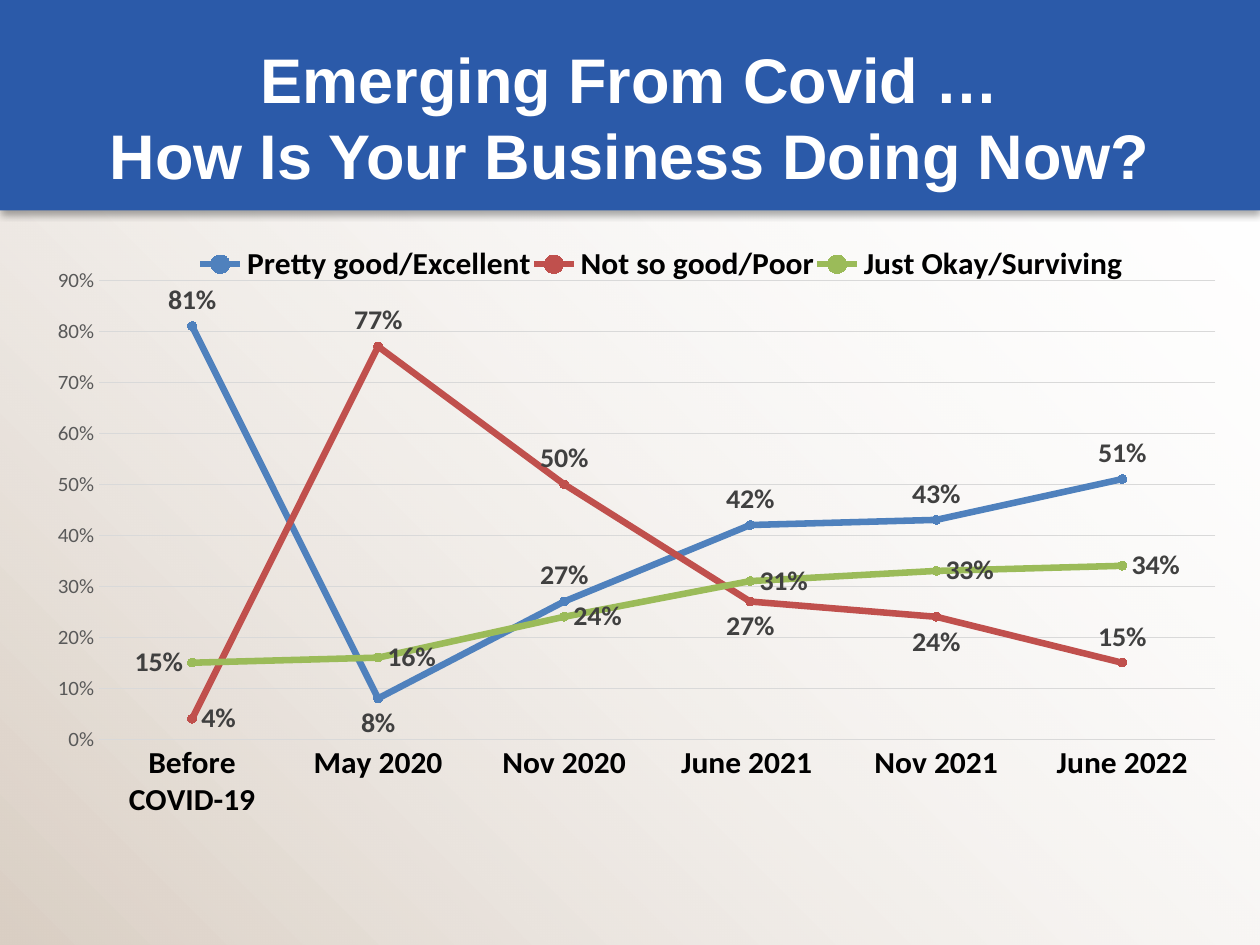
from lxml import etree
from pptx import Presentation
from pptx.chart.data import CategoryChartData
from pptx.dml.color import RGBColor
from pptx.enum.chart import (XL_CHART_TYPE as ChartType, XL_LABEL_POSITION as LabelPos,
                             XL_LEGEND_POSITION as LegendPos, XL_MARKER_STYLE as Marker,
                             XL_TICK_MARK as TickMark)
from pptx.enum.shapes import MSO_SHAPE as Shape
from pptx.enum.text import MSO_ANCHOR as Anchor, PP_ALIGN as Align
from pptx.oxml import parse_xml
from pptx.oxml.ns import nsdecls, qn
from pptx.util import Inches, Pt

WHITE = RGBColor(0xFF, 0xFF, 0xFF)
BLACK = RGBColor(0, 0, 0)
SAND = RGBColor(0xDA, 0xCF, 0xC4)
BANNER_BLUE = RGBColor(0x2B, 0x5A, 0xA9)
GRID_GRAY = RGBColor(0xD9, 0xD9, 0xD9)
AXIS_GRAY = RGBColor(0x59, 0x59, 0x59)
LABEL_GRAY = RGBColor(0x40, 0x40, 0x40)
BLUE = RGBColor(0x4F, 0x81, 0xBD)
RED = RGBColor(0xC0, 0x50, 0x4D)
GREEN = RGBColor(0x9B, 0xBB, 0x59)

# Content
TITLE = "Emerging From Covid …\vHow Is Your Business Doing Now?"
PERIODS = ["Before COVID-19", "May 2020", "Nov 2020", "June 2021 ", "Nov 2021", "June 2022"]
# name, values, colour, usual label position, label positions of single points
RATINGS = [
    ("Pretty good/Excellent", [0.81, 0.08, 0.27, 0.42, 0.43, 0.51], BLUE,
     LabelPos.ABOVE, {1: LabelPos.BELOW}),
    ("Not so good/Poor", [0.04, 0.77, 0.50, 0.27, 0.24, 0.15], RED,
     LabelPos.ABOVE, {0: LabelPos.RIGHT, 3: LabelPos.BELOW, 4: LabelPos.BELOW}),
    ("Just Okay/Surviving", [0.15, 0.16, 0.24, 0.31, 0.33, 0.34], GREEN,
     LabelPos.RIGHT, {0: LabelPos.LEFT}),
]


def set_font(font, size, color, bold=False, name="Calibri"):
    font.name, font.size, font.bold = name, Pt(size), bold
    font.color.rgb = color


def add_panel(page, height):
    panel = page.shapes.add_shape(Shape.RECTANGLE, 0, 0, Inches(10), Inches(height))
    panel.shadow.inherit = False
    panel.line.fill.background()
    return panel


def set_layout(part, index, left, top, width, height, inner=False):
    """Place a chart part by fractions of the chart's size."""
    for layout in part.findall(qn("c:layout")):
        part.remove(layout)
    target = '<c:layoutTarget val="inner"/>' if inner else ""
    part.insert(index, parse_xml(
        f'<c:layout {nsdecls("c")}><c:manualLayout>{target}'
        '<c:xMode val="edge"/><c:yMode val="edge"/>'
        f'<c:x val="{left}"/><c:y val="{top}"/><c:w val="{width}"/><c:h val="{height}"/>'
        '</c:manualLayout></c:layout>'))


deck = Presentation()
deck.slide_width, deck.slide_height = Inches(10), Inches(7.5)
page = deck.slides.add_slide(deck.slide_layouts[6])

# Background fading from sand to clear
backdrop = add_panel(page, 7.5)
backdrop.fill.gradient()
backdrop.fill.gradient_angle = 45
for stop, color, position in zip(backdrop.fill.gradient_stops, (SAND, WHITE), (0, 1)):
    stop.color.rgb = color
    stop.position = position
clear_color = backdrop._element.spPr.findall(".//" + qn("a:srgbClr"))[-1]
etree.SubElement(clear_color, qn("a:alpha")).set("val", "0")

# Banner with a soft shadow below
banner = add_panel(page, 1.67)
banner.fill.solid()
banner.fill.fore_color.rgb = BANNER_BLUE
banner._element.spPr.find(qn("a:effectLst")).append(parse_xml(
    f'<a:outerShdw {nsdecls("a")} blurRad="{Pt(4)}" dist="{Pt(2.2)}" dir="5400000" '
    'rotWithShape="0"><a:srgbClr val="000000"><a:alpha val="32000"/></a:srgbClr></a:outerShdw>'))

# Title
title_box = page.shapes.add_textbox(Inches(0.5), Inches(0.3), Inches(9), Inches(1.25))
frame = title_box.text_frame
frame.word_wrap = True
frame.vertical_anchor = Anchor.MIDDLE
frame.margin_left = frame.margin_right = frame.margin_top = frame.margin_bottom = Inches(0.05)
para = frame.paragraphs[0]
para.text = TITLE
para.alignment = Align.CENTER
for span in para.runs:
    set_font(span.font, 36, WHITE, True, "Arial")

# Line chart
data = CategoryChartData(number_format="0%")
data.categories = PERIODS
for name, values, *_ in RATINGS:
    data.add_series(name, values)
chart = page.shapes.add_chart(ChartType.LINE_MARKERS, Inches(0.17), Inches(1.92),
                              Inches(9.63), Inches(4.57), data).chart
chart.has_title = False
set_font(chart.font, 10, BLACK)
chart.plots[0].vary_by_categories = False

for series, (_, _, color, position, exceptions) in zip(chart.plots[0].series, RATINGS):
    series.smooth = False
    series.format.line.color.rgb = color
    series.format.line.width = Pt(3.75)
    series.marker.style, series.marker.size = Marker.CIRCLE, 5
    series.marker.format.fill.solid()
    series.marker.format.fill.fore_color.rgb = color
    series.marker.format.line.color.rgb = color
    labels = series.data_labels
    labels.show_value = True
    labels.number_format, labels.number_format_is_linked = "0%", False
    labels.position = position
    set_font(labels.font, 16, LABEL_GRAY, True)
    for index, point_position in exceptions.items():
        label = series.points[index].data_label
        set_font(label.font, 16, LABEL_GRAY, True)
        label.position = point_position

# Axes
periods_axis, share_axis = chart.category_axis, chart.value_axis
for axis in (periods_axis, share_axis):
    axis.major_tick_mark = axis.minor_tick_mark = TickMark.NONE
set_font(periods_axis.tick_labels.font, 18, BLACK, True)
set_font(share_axis.tick_labels.font, 12, AXIS_GRAY)
share_axis.minimum_scale, share_axis.maximum_scale, share_axis.major_unit = 0, 0.9, 0.1
share_axis.tick_labels.number_format = "0%"
share_axis.tick_labels.number_format_is_linked = False
share_axis.format.line.fill.background()
for line in (periods_axis.format.line, share_axis.major_gridlines.format.line):
    line.color.rgb = GRID_GRAY
    line.width = Pt(0.75)

# Legend above the plot area
chart.has_legend = True
legend = chart.legend
legend.position = LegendPos.BOTTOM
legend.include_in_layout = False
set_font(legend.font, 18, BLACK, True)
set_layout(legend._element, 1, 0.145, 0, 0.765, 0.08)
set_layout(chart._chartSpace.chart.plotArea, 0, 0.064, 0.069, 0.92, 0.825, inner=True)

deck.save("out.pptx")
